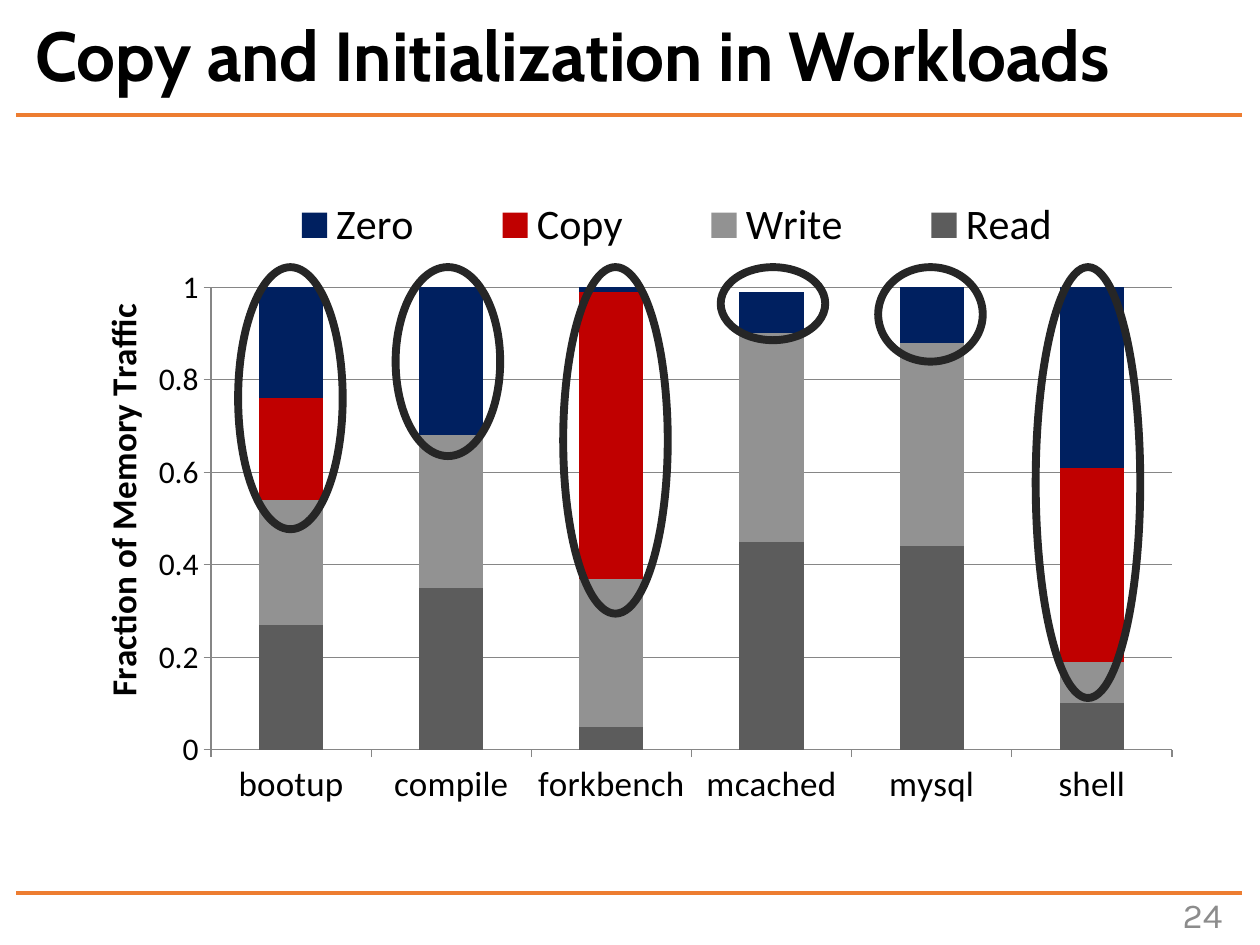
from lxml.etree import SubElement
from pptx import Presentation
from pptx.chart.data import CategoryChartData
from pptx.dml.color import RGBColor
from pptx.enum.chart import XL_CHART_TYPE, XL_LEGEND_POSITION, XL_TICK_MARK
from pptx.enum.shapes import MSO_CONNECTOR, MSO_SHAPE
from pptx.enum.text import MSO_ANCHOR, PP_ALIGN
from pptx.oxml import parse_xml
from pptx.oxml.ns import nsdecls, qn
from pptx.util import Inches, Pt

WIDTH, HEIGHT = Inches(10), Inches(7.5)
BLACK = RGBColor(0x00, 0x00, 0x00)
ORANGE = RGBColor(0xED, 0x7D, 0x31)
RING = RGBColor(0x26, 0x26, 0x26)
GRID = RGBColor(0x86, 0x86, 0x86)
NUMBER = RGBColor(0x8C, 0x8C, 0x8C)

WORKLOADS = ["bootup", "compile", "forkbench", "mcached", "mysql", "shell"]
TRAFFIC = [
    ("Read", RGBColor(0x5C, 0x5C, 0x5C), [0.27, 0.35, 0.05, 0.45, 0.44, 0.1]),
    ("Write", RGBColor(0x92, 0x92, 0x92), [0.27, 0.33, 0.32, 0.45, 0.44, 0.09]),
    ("Copy", RGBColor(0xC0, 0x00, 0x00), [0.22, 0, 0.62, 0, 0, 0.42]),
    ("Zero", RGBColor(0x00, 0x20, 0x60), [0.24, 0.32, 0.01, 0.09, 0.12, 0.39]),
]
RINGS = [(18.9, 27.73), (31.4, 20), (44.7, 36.67), (57.2, 7.73), (69.7, 10), (82.2, 45.6)]


def across(share):
    """Turn a percentage of the slide width into a length."""
    return int(WIDTH * share / 100)


def down(share):
    """Turn a percentage of the slide height into a length."""
    return int(HEIGHT * share / 100)


def box(x, y, w, h):
    """Turn four percentages into left, top, width and height."""
    return across(x), down(y), across(w), down(h)


def style(font, size, color=BLACK, name="Calibri", bold=False):
    """Set the main properties of a font."""
    font.size, font.name, font.bold = Pt(size), name, bold
    font.color.rgb = color


def add_text(s, text, place, size, color, name, bold=False, align=PP_ALIGN.LEFT):
    """Add one line of vertically centred text."""
    tf = s.shapes.add_textbox(*place).text_frame
    tf.word_wrap = True
    tf.vertical_anchor = MSO_ANCHOR.MIDDLE
    tf.text = text
    p = tf.paragraphs[0]
    p.alignment, p.line_spacing = align, 0.9
    style(p.runs[0].font, size, color, name, bold)


def add_rule(s, y):
    """Add a horizontal orange rule."""
    line = s.shapes.add_connector(
        MSO_CONNECTOR.STRAIGHT, across(1.3), down(y), across(98.6), down(y))
    line.line.color.rgb, line.line.width = ORANGE, Pt(2.25)
    SubElement(line._element.spPr, qn("a:effectLst"))


def add_ring(s, place):
    """Add an unfilled ellipse that highlights part of a column."""
    sp = s.shapes.add_shape(MSO_SHAPE.OVAL, *place)
    sp.shadow.inherit = False
    sp.fill.background()
    sp.line.color.rgb, sp.line.width = RING, Pt(4.5)


def set_layout(element, index, inner=False, **shares):
    """Place a chart part by shares of the chart's size."""
    for old in element.findall(qn("c:layout")):
        element.remove(old)
    layout = parse_xml(f"<c:layout {nsdecls('c')}><c:manualLayout/></c:layout>")
    values = {"layoutTarget": "inner"} if inner else {}
    values.update(xMode="edge", yMode="edge", **shares)
    for tag, value in values.items():
        SubElement(layout[0], qn(f"c:{tag}")).set("val", str(value))
    element.insert(index, layout)


def style_axis(axis, size):
    """Set the tick marks, line and labels of an axis."""
    axis.major_tick_mark = XL_TICK_MARK.OUTSIDE
    axis.minor_tick_mark = XL_TICK_MARK.NONE
    axis.format.line.color.rgb = GRID
    style(axis.tick_labels.font, size)


def add_traffic_chart(s, place):
    """Add the stacked columns of memory traffic."""
    data = CategoryChartData(number_format="General")
    data.categories = WORKLOADS
    for name, _, values in TRAFFIC:
        data.add_series(name, values)
    chart = s.shapes.add_chart(XL_CHART_TYPE.COLUMN_STACKED, *place, data).chart
    style(chart.font, 10)
    chart.has_title = False

    plot = chart.plots[0]
    plot.gap_width, plot.overlap, plot.vary_by_categories = 150, 100, False
    for series, (_, color, _) in zip(plot.series, TRAFFIC):
        series.format.fill.solid()
        series.format.fill.fore_color.rgb = color
    plot_area = chart._chartSpace.chart.plotArea
    set_layout(plot_area, 0, inner=True, x=0.126, y=0.174, w=0.854, h=0.702)

    style_axis(chart.category_axis, 20)
    axis = chart.value_axis
    style_axis(axis, 18)
    axis.minimum_scale, axis.maximum_scale, axis.major_unit = 0, 1, 0.2
    axis.major_gridlines.format.line.color.rgb = GRID
    tf = axis.axis_title.text_frame
    tf.text = "Fraction of Memory Traffic"
    style(tf.paragraphs[0].runs[0].font, 20, bold=True)
    set_layout(axis.axis_title._element, 1, x=0.02, y=0.19)

    chart.has_legend = True
    legend = chart.legend
    legend.position, legend.include_in_layout = XL_LEGEND_POSITION.RIGHT, False
    style(legend.font, 24)
    set_layout(legend._element, 1, x=0.14, y=0.03, w=0.8, h=0.1)


def main():
    """Build and save the slide."""
    prs = Presentation()
    prs.slide_width, prs.slide_height = WIDTH, HEIGHT
    s = prs.slides.add_slide(prs.slide_layouts[6])
    add_text(s, "24", box(87.2, 94.4, 10.8, 5.33), 20, NUMBER, "Karla",
             align=PP_ALIGN.RIGHT)
    for y in (12.13, 94.53):
        add_rule(s, y)
    add_text(s, "Copy and Initialization in Workloads", box(1.8, 1.87, 97.3, 8.8),
             39.6, BLACK, "Cabin", bold=True)
    add_traffic_chart(s, box(5.5, 18.27, 89.3, 69.73))
    for x, height in RINGS:
        add_ring(s, box(x, 28.27, 8.3, height))
    prs.save("out.pptx")


if __name__ == "__main__":
    main()
